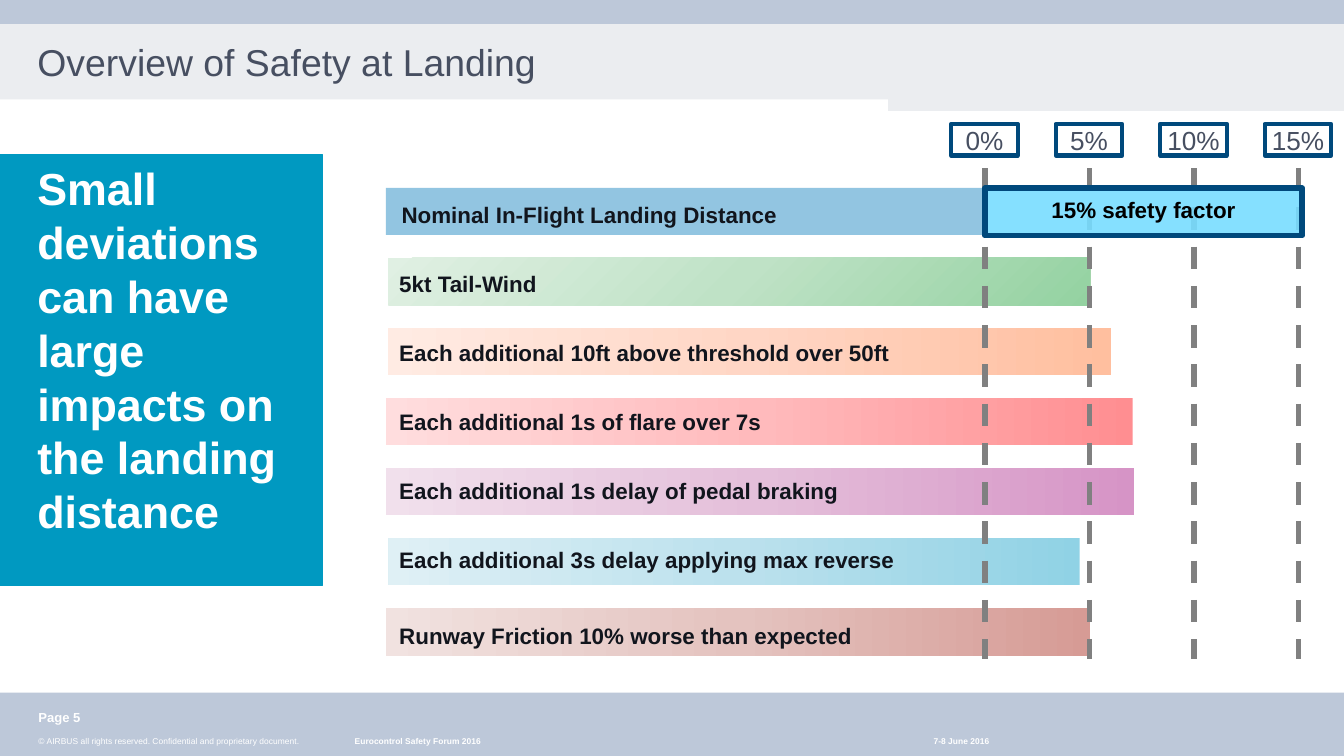
"""Build the landing safety overview slide."""
from pptx import Presentation
from pptx import util as u
from pptx.dml.color import RGBColor
from pptx.enum import dml, shapes, text
from pptx.oxml import parse_xml
from pptx.oxml.ns import nsdecls, qn
from lxml import etree

Pt = u.Pt
ALIGN, ANCHOR = text.PP_ALIGN, text.MSO_ANCHOR
color = RGBColor.from_string


def add_box(left, top, width, height, fill=None, line=None, weight=1):
    lengths = [Pt(v) for v in (left, top, width, height)]
    if fill is None:
        return page.shapes.add_textbox(*lengths)
    box = page.shapes.add_shape(shapes.MSO_SHAPE.RECTANGLE, *lengths)
    box.shadow.inherit = False
    box.fill.solid()
    box.fill.fore_color.rgb = color(fill)
    if line:
        box.line.color.rgb = color(line)
        box.line.width = Pt(weight)
    else:
        box.line.fill.background()
    return box


def write(box, words, size, ink, bold=False, align=ALIGN.LEFT,
          anchor=ANCHOR.TOP, insets=(0, 0, 0, 0), spacing=None):
    frame = box.text_frame
    frame.word_wrap = True
    frame.vertical_anchor = anchor
    (frame.margin_left, frame.margin_top,
     frame.margin_right, frame.margin_bottom) = [Pt(v) for v in insets]
    para = frame.paragraphs[0]
    para.text = words
    para.alignment = align
    para.line_spacing = spacing
    para.font.name = "Arial"
    para.font.size = Pt(size)
    para.font.bold = bold
    para.font.color.rgb = color(ink)


deck = Presentation()
deck.slide_width, deck.slide_height = Pt(720), Pt(405)
page = deck.slides.add_slide(deck.slide_layouts[6])

outline = page.shapes.build_freeform(Pt(0), Pt(12.8))
outline.add_line_segments([(Pt(x), Pt(y)) for x, y in (
    (720, 12.8), (720, 59.4), (475.8, 59.4), (475.8, 53.3), (0, 53.3))])
header = outline.convert_to_shape()
header.shadow.inherit = False
header.fill.solid()
header.fill.fore_color.rgb = color("EBEDF0")
header.line.fill.background()

add_box(0, 371, 720, 34, "BDC8D9")
add_box(0, 0, 720, 12.8, "BDC8D9")

write(add_box(20.6, 394.4, 170, 9.4),
      "© AIRBUS all rights reserved. Confidential and proprietary document.",
      4.5, "FFFFFF", anchor=ANCHOR.MIDDLE, insets=(0, 0, 7.2, 3.6))
write(add_box(473, 394.4, 57, 9.4), "7-8 June 2016", 4.5, "FFFFFF", True, ALIGN.RIGHT)
write(add_box(190, 394.4, 283.5, 9.4), "Eurocontrol Safety Forum 2016", 4.5, "FFFFFF", True)
write(add_box(20.6, 376.6, 85, 13), "Page 5", 7, "FFFFFF", True, insets=(0, 3.6, 0, 3.6))
write(add_box(20, 17.2, 680, 36), "Overview of Safety at Landing", 20, "474F61",
      anchor=ANCHOR.MIDDLE, spacing=0.8)

LINEAR = '<a:lin ang="10800000" scaled="0"/>'
RADIAL = '<a:path path="circle"><a:fillToRect l="100000" t="100000"/></a:path>'
bars = [
    ("Nominal In-Flight Landing Distance", 206.8, 320.6, 208, 104.4, ["92C5E1"], None),
    ("5kt Tail-Wind", 208, 376, 206.8, 141.3, ["94D2A1", "BFE2C6", "E0F0E3"], RADIAL),
    ("Each additional 10ft above threshold over 50ft", 208, 387.5, 206.8, 178.2,
     ["FFBF9F", "FFD6C5", "FFEBE3"], LINEAR),
    ("Each additional 1s of flare over 7s", 206.8, 400, 206.8, 215.2,
     ["FF8E91", "FFBABC", "FFDDDE"], LINEAR),
    ("Each additional 1s delay of pedal braking", 206.8, 401, 206.8, 252.1,
     ["D694C6", "E4BFDA", "F1E0EC"], LINEAR),
    ("Each additional 3s delay applying max reverse", 208, 370.4, 206.8, 289,
     ["90D2E5", "BCE1ED", "DFF0F5"], LINEAR),
    ("Runway Friction 10% worse than expected", 206.8, 377.2, 206.8, 329.6,
     ["D69B95", "E4C3BF", "F1E2E0"], LINEAR),
]
for row, (label, left, width, label_left, label_top, tones, direction) in enumerate(bars):
    bar = add_box(left, 100.6 + 37.55 * row, width, 25.3, tones[0])
    if direction:
        stops = "".join(
            f'<a:gs pos="{50000 * i}"><a:srgbClr val="{tone}"/></a:gs>'
            for i, tone in enumerate(tones))
        gradient = parse_xml(f'<a:gradFill {nsdecls("a")} rotWithShape="1">'
                             f'<a:gsLst>{stops}</a:gsLst>{direction}</a:gradFill>')
        properties = bar._element.spPr
        properties.replace(properties.find(qn("a:solidFill")), gradient)
    write(add_box(label_left, label_top, 350, 16.6), label, 12, "11151D", True,
          insets=(7.2, 3.6, 7.2, 3.6))

percents = ["0%", "5%", "10%", "15%"]
for column in range(len(percents)):
    x = Pt(527.6 + 56 * column)
    guide = page.shapes.add_connector(shapes.MSO_CONNECTOR.STRAIGHT, x, Pt(69), x, Pt(353))
    guide.line.color.rgb = color("808080")
    guide.line.width = Pt(3)
    guide.line.dash_style = dml.MSO_LINE.DASH
    etree.SubElement(guide._element.spPr, qn("a:effectLst"))

for column, percent in enumerate(percents):
    tag = add_box(509.6 + 56 * column, 66.4, 35.6, 17, "FFFFFF", "00497C", 2.25)
    write(tag, percent, 14, "474F61", align=ALIGN.CENTER, anchor=ANCHOR.MIDDLE)

factor = add_box(527.6, 100.8, 170, 25.5, "78DDFF", "00497C", 3)
tint = factor._element.spPr.find(qn("a:solidFill"))[0]
etree.SubElement(tint, qn("a:alpha"), val="90000")
write(factor, "15% safety factor", 12, "000000", True, ALIGN.CENTER, ANCHOR.MIDDLE,
      (7.2, 3.6, 7.2, 3.6), 0.8)

panel = add_box(0, 82.8, 172.8, 231, "0099C1", "0099C1", 0.75)
write(panel, "Small deviations can have large impacts on the landing distance",
      24, "FFFFFF", True, insets=(20, 3.6, 7.2, 3.6))

deck.save("out.pptx")
